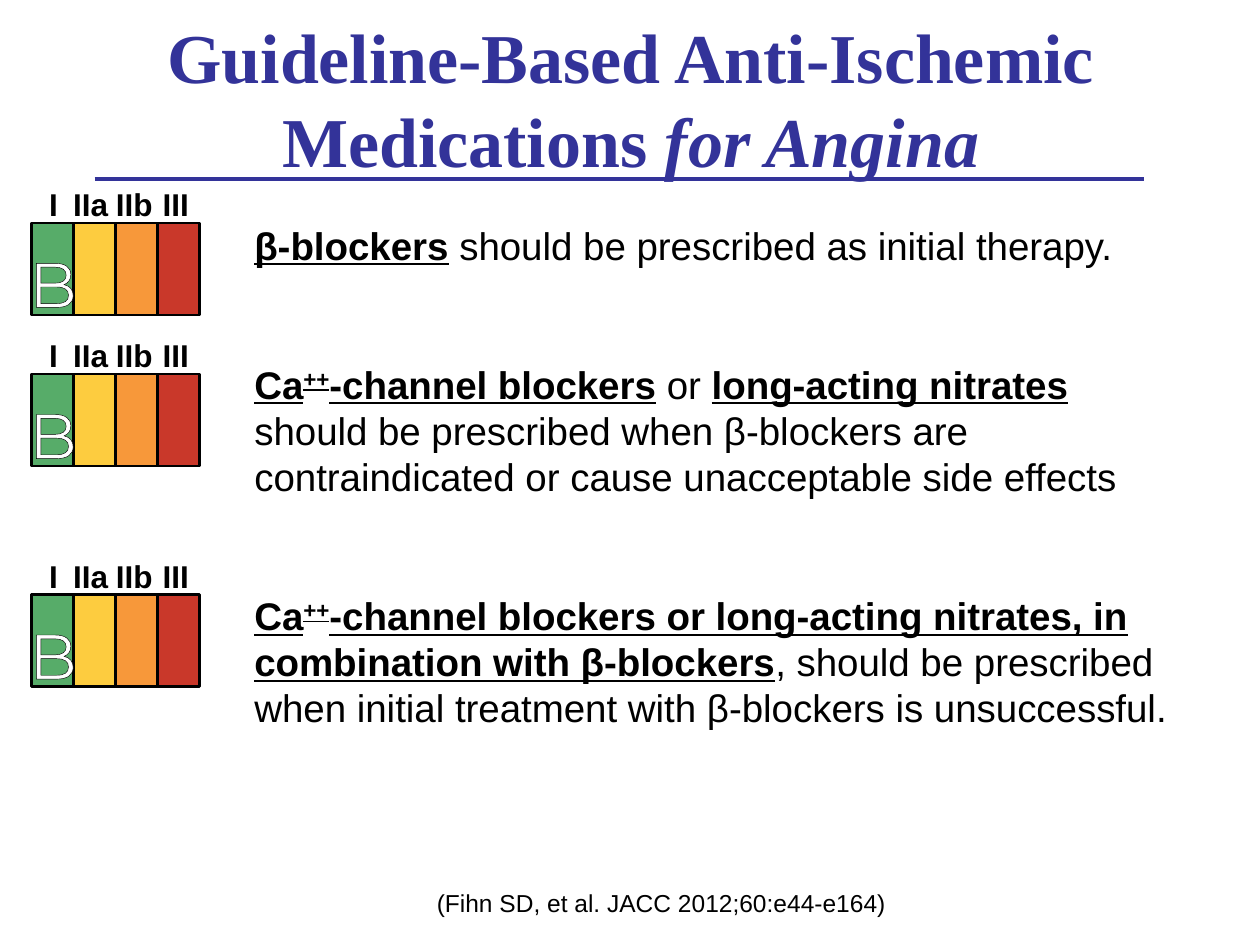
from lxml import etree
from pptx import Presentation
from pptx.dml.color import RGBColor
from pptx.enum.shapes import MSO_CONNECTOR, MSO_SHAPE
from pptx.enum.text import MSO_ANCHOR, MSO_AUTO_SIZE, PP_ALIGN
from pptx.oxml import parse_xml
from pptx.oxml.ns import nsdecls, qn
from pptx.util import Inches, Pt

LINE = MSO_CONNECTOR.STRAIGHT
RECT = MSO_SHAPE.RECTANGLE
MIDDLE = MSO_ANCHOR.MIDDLE
CENTER = PP_ALIGN.CENTER
LEFT = PP_ALIGN.LEFT
FIXED = MSO_AUTO_SIZE.NONE

NAVY = RGBColor(0x33, 0x33, 0x99)
BLACK = RGBColor(0, 0, 0)
WHITE = RGBColor(255, 255, 255)
GREEN = RGBColor(0x57, 0xAC, 0x69)
YELLOW = RGBColor(0xFD, 0xCC, 0x3F)
ORANGE = RGBColor(0xF7, 0x98, 0x3A)
RED = RGBColor(0xC9, 0x38, 0x2A)

# Class name, colour, label left within the scale
CLASSES = [
    ("I", GREEN, 0.14),
    ("IIa", YELLOW, 0.33),
    ("IIb", ORANGE, 0.67),
    ("III", RED, 1.04),
]
SCALE_LEFT = 0.25
SCALE_TOPS = [1.47, 2.67, 4.42]
CELL = 1 / 3

# Each run is its text and its style: "key" is bold and underlined
ADVICE = [
    [("β-blockers", "key"), (" should be prescribed as initial therapy.", "")],
    [
        ("Ca", "key"), ("++", "super"), ("-channel blockers", "key"),
        (" or ", ""), ("long-acting nitrates", "key"),
        (" should be prescribed when β-blockers are contraindicated "
         "or cause unacceptable side effects", ""),
    ],
    [
        ("Ca", "key"), ("++", "super"),
        ("-channel blockers or long-acting nitrates, "
         "in combination with β-blockers", "key"),
        (", should be prescribed when initial treatment with "
         "β-blockers is unsuccessful.", ""),
    ],
]


def style(font, name, size, color, bold=False):
    font.name = name
    font.size = Pt(size)
    font.color.rgb = color
    font.bold = bold


def add_text(shapes, box, text, name, size, color, bold=False, align=CENTER):
    """Add one line of text in a box without margins."""
    shape = shapes.add_textbox(*map(Inches, box))
    frame = shape.text_frame
    frame.word_wrap = True
    frame.margin_left = frame.margin_right = 0
    frame.margin_top = frame.margin_bottom = 0
    para = frame.paragraphs[0]
    para.text = text
    para.alignment = align
    style(para.font, name, size, color, bold)
    return para


def add_title(slide):
    title = slide.shapes.title
    title.left, title.top = Inches(0.17), Inches(0.17)
    title.width, title.height = Inches(9.67), Inches(1.2)
    frame = title.text_frame
    frame.auto_size = FIXED
    frame.vertical_anchor = MIDDLE
    para = frame.paragraphs[0]
    para.alignment = CENTER
    style(para.font, "Times New Roman", 40, NAVY, True)
    para.add_run().text = "Guideline-Based Anti-Ischemic Medications "
    run = para.add_run()
    run.text = "for Angina"
    run.font.italic = True


def add_rule(slide):
    rule = slide.shapes.add_connector(
        LINE, Inches(0.75), Inches(1.42), Inches(9.08), Inches(1.42))
    rule.line.color.rgb = NAVY
    rule.line.width = Pt(2.5)
    etree.SubElement(rule._element.spPr, qn("a:effectLst"))


def add_advice(slide):
    box = slide.shapes.add_textbox(
        Inches(1.92), Inches(1.71), Inches(7.58), Inches(4.75))
    frame = box.text_frame
    frame.word_wrap = True
    for i, runs in enumerate(ADVICE):
        para = frame.add_paragraph() if i else frame.paragraphs[0]
        para.space_before = Pt(53 if i else 0)
        style(para.font, "Arial", 22, BLACK)
        for text, kind in runs:
            run = para.add_run()
            run.text = text
            if kind:
                run.font.bold = run.font.underline = True
            if kind == "super":
                run.font._element.set("baseline", "30000")


def outline(run):
    """Draw a thin black line around the letters of a run."""
    line = parse_xml(
        f'<a:ln {nsdecls("a")} w="9525"><a:solidFill>'
        '<a:srgbClr val="000000"/></a:solidFill></a:ln>')
    run.font._element.insert(0, line)


def add_scale(slide, top):
    """Add the four recommendation classes with the evidence level B."""
    shapes = slide.shapes.add_group_shape().shapes
    for i, (name, color, left) in enumerate(CLASSES):
        cell = shapes.add_shape(
            RECT, Inches(SCALE_LEFT + i * CELL), Inches(top + 0.3),
            Inches(CELL), Inches(0.73))
        cell.shadow.inherit = False
        cell.fill.solid()
        cell.fill.fore_color.rgb = color
        cell.line.color.rgb = BLACK
        cell.line.width = Pt(1.5)
        add_text(shapes, (SCALE_LEFT + left, top, CELL, 0.3),
                 name, "Arial", 18, BLACK, True, LEFT)
    level = add_text(shapes, (SCALE_LEFT - 0.08, top + 0.47, 0.5, 0.43),
                     "B", "Montserrat", 36, WHITE)
    outline(level.runs[0])


def add_source(slide):
    add_text(slide.shapes, (2.75, 7.05, 5, 0.24),
             "(Fihn SD, et al. JACC 2012;60:e44-e164)", "Arial", 14, BLACK)


def main():
    prs = Presentation()
    prs.slide_width, prs.slide_height = Inches(10), Inches(7.5)
    slide = prs.slides.add_slide(prs.slide_layouts[5])
    add_title(slide)
    add_advice(slide)
    for top in SCALE_TOPS:
        add_scale(slide, top)
    add_rule(slide)
    add_source(slide)
    prs.save("out.pptx")


if __name__ == "__main__":
    main()
